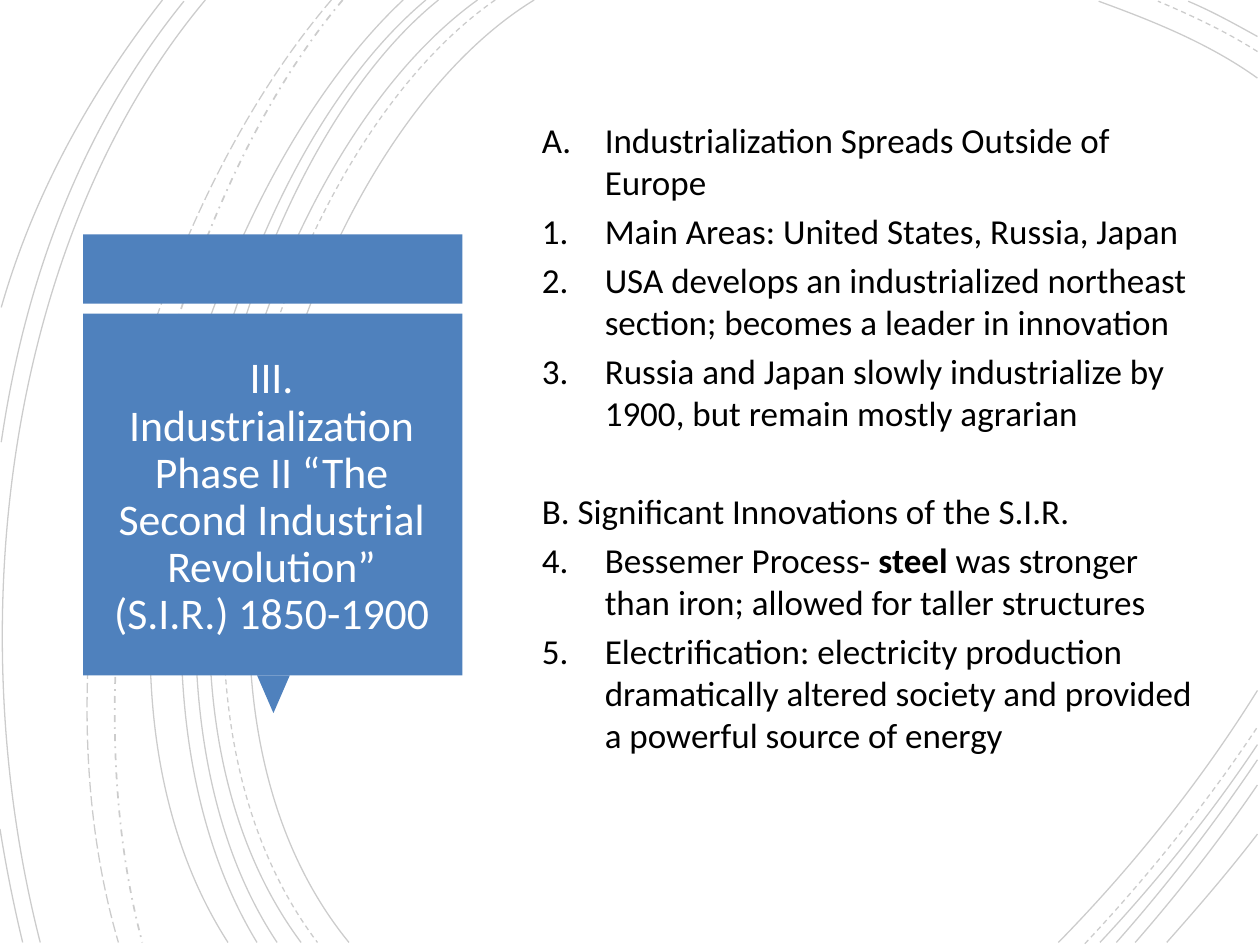
from lxml import etree
from pptx import Presentation
from pptx import util as u
from pptx.dml.color import RGBColor
from pptx.enum import dml, shapes, text
from pptx.oxml import ns

BLUE, WHITE, BLACK = "4F81BD", "FFFFFF", "000000"
FONT = "Calibri"
SOLID, DASH = dml.MSO_LINE.SOLID, dml.MSO_LINE.DASH
LONG_DASH, DASH_DOT = dml.MSO_LINE.LONG_DASH, dml.MSO_LINE.DASH_DOT

# Background arcs: start, two control points and end of a cubic curve
ARCS = [
    (SOLID, (4.24, 0), (2.36, 1.15), (1.07, 5.4), (2.77, 7.48)),
    (SOLID, (9.98, 0.62), (9.59, 0.34), (9.13, 0.16), (8.72, 0.01)),
    (SOLID, (8.4, 7.48), (8.97, 6.9), (9.52, 6.22), (9.98, 5.48)),
    (DASH, (3.93, 0), (2.13, 1.25), (0.92, 5.37), (2.52, 7.48)),
    (DASH, (9.98, 0.41), (9.73, 0.25), (9.45, 0.12), (9.19, 0.01)),
    (DASH, (8.61, 7.49), (9.09, 6.98), (9.56, 6.4), (9.98, 5.77)),
    (SOLID, (3.79, 0), (2.02, 1.27), (0.82, 5.37), (2.39, 7.48)),
    (SOLID, (9.98, 0.29), (9.8, 0.19), (9.62, 0.09), (9.43, 0.01)),
    (SOLID, (8.73, 7.48), (9.17, 7.01), (9.6, 6.48), (9.98, 5.91)),
    (SOLID, (3.48, 0), (1.83, 1.33), (0.82, 5.41), (2.2, 7.48)),
    (SOLID, (8.86, 7.48), (9.25, 7.04), (9.63, 6.55), (9.98, 6.03)),
    (SOLID, (3.38, 0), (1.73, 1.38), (0.73, 5.33), (2.04, 7.48)),
    (SOLID, (9.01, 7.48), (9.35, 7.09), (9.68, 6.67), (9.98, 6.23)),
    (SOLID, (3.2, 0), (1.63, 1.47), (0.4, 5.29), (1.81, 7.48)),
    (SOLID, (9.26, 7.48), (9.5, 7.21), (9.75, 6.92), (9.98, 6.62)),
    (DASH_DOT, (2.72, 0), (1.32, 1.66), (0.49, 5.09), (1.13, 7.48)),
    (LONG_DASH, (2.63, 0), (1.18, 1.69), (0.21, 4.99), (0.94, 7.48)),
    (SOLID, (1.63, 0), (0.08, 1.85), (-0.34, 4.9), (0.32, 7.48)),
    (SOLID, (1.46, 0.01), (0.69, 0.96), (0.21, 2.14), (0.01, 3.51)),
    (SOLID, (0, 6.58), (0.05, 6.89), (0.11, 7.19), (0.18, 7.48)),
    (SOLID, (1.29, 0), (0.75, 0.69), (0.28, 1.5), (0.01, 2.44)),
]

TITLE = ("III. Industrialization Phase II “The Second Industrial "
         "Revolution” (S.I.R.) 1850-1900")

# Outline: numbering scheme, first number, runs as (text, bold)
LETTER, NUMBER = "alphaUcPeriod", "arabicPeriod"
OUTLINE = [
    (LETTER, 1, [("Industrialization Spreads Outside of Europe", False)]),
    (NUMBER, 1, [("Main Areas: United States, Russia, Japan", False)]),
    (NUMBER, 1, [("USA develops an industrialized northeast section; "
                  "becomes a leader in innovation", False)]),
    (NUMBER, 1, [("Russia and Japan slowly industrialize by 1900, "
                  "but remain mostly agrarian", False)]),
    (None, None, [("B. Significant Innovations of the S.I.R.", False)]),
    (NUMBER, 4, [("Bessemer Process- ", False), ("steel", True),
                 (" was stronger than iron; allowed for taller structures", False)]),
    (NUMBER, 4, [("Electrification: electricity production dramatically altered "
                  "society and provided a powerful source of energy", False)]),
]


def rgb(value):
    return RGBColor.from_string(value)


def add_text(paragraph, content, size=20, color=BLACK, bold=False):
    run = paragraph.add_run()
    run.text = content
    run.font.name = FONT
    run.font.size = u.Pt(size)
    run.font.bold = bold
    run.font.color.rgb = rgb(color)


def curve_outline(arc):
    """Join the three segments of an outline into one cubic curve."""
    outline = arc.element.spPr.find(".//" + ns.qn("a:path"))
    curve = etree.SubElement(outline, ns.qn("a:cubicBezTo"))
    for segment in outline.findall(ns.qn("a:lnTo")):
        curve.append(segment[0])
        outline.remove(segment)


def add_arc(group, dash, points):
    start, *rest = [tuple(map(u.Inches, point)) for point in points]
    builder = group.shapes.build_freeform(*start)
    builder.add_line_segments(rest, close=False)
    arc = builder.convert_to_shape()
    curve_outline(arc)
    arc.shadow.inherit = False
    arc.fill.background()
    arc.line.width = u.Pt(1 if dash == DASH_DOT else 0.75)
    arc.line.color.rgb = rgb(BLACK)
    arc.line.dash_style = dash
    # 20 % opacity
    line_color = arc.element.spPr.find(ns.qn("a:ln")).find(".//" + ns.qn("a:srgbClr"))
    etree.SubElement(line_color, ns.qn("a:alpha"), val="20000")


def add_block(group, kind, left, top, width, height, rotation=0):
    block = group.shapes.add_shape(kind, *map(u.Inches, (left, top, width, height)))
    block.rotation = rotation
    block.shadow.inherit = False
    block.fill.solid()
    block.fill.fore_color.rgb = rgb(BLUE)
    block.line.fill.background()


def place(slide, holder, left, top, width, height):
    """Move a placeholder to its spot, in front of the artwork."""
    holder.left, holder.top, holder.width, holder.height = map(
        u.Inches, (left, top, width, height))
    slide.shapes.element.append(holder.element)
    frame = holder.text_frame
    frame.word_wrap = True
    frame.auto_size = text.MSO_AUTO_SIZE.NONE
    frame.vertical_anchor = text.MSO_ANCHOR.MIDDLE
    return frame


def set_numbering(paragraph, scheme, start):
    props = paragraph._p.get_or_add_pPr()
    indent = u.Inches(0.5) if scheme else 0
    props.set("marL", str(indent))
    props.set("indent", str(-indent))
    if scheme:
        etree.SubElement(props, ns.qn("a:buFont"), typeface="+mj-lt")
        etree.SubElement(props, ns.qn("a:buAutoNum"), type=scheme, startAt=str(start))
    else:
        etree.SubElement(props, ns.qn("a:buNone"))


def fill_title(frame):
    heading = frame.paragraphs[0]
    heading.alignment = text.PP_ALIGN.CENTER
    heading.line_spacing = 0.9
    add_text(heading, TITLE, size=25, color=WHITE)


def fill_outline(frame):
    # Deeper bottom margin lifts the centred list
    frame.margin_bottom = u.Inches(0.67)
    for index, (scheme, start, runs) in enumerate(OUTLINE):
        item = frame.add_paragraph() if index else frame.paragraphs[0]
        # The second section is set off by a gap
        item.space_before = u.Pt(4 if scheme else 32)
        set_numbering(item, scheme, start)
        for content, bold in runs:
            add_text(item, content, bold=bold)


def main():
    deck = Presentation()
    deck.slide_width, deck.slide_height = u.Inches(10), u.Inches(7.5)
    slide = deck.slides.add_slide(deck.slide_layouts[1])

    # Background arcs
    backdrop = slide.shapes.add_group_shape()
    for dash, *points in ARCS:
        add_arc(backdrop, dash, points)

    # Title panel: top band, pointer, main block
    panel = slide.shapes.add_group_shape()
    add_block(panel, shapes.MSO_SHAPE.RECTANGLE, 0.66, 1.86, 3.01, 0.55)
    add_block(panel, shapes.MSO_SHAPE.ISOSCELES_TRIANGLE, 2.04, 5.36, 0.26, 0.3, 180)
    add_block(panel, shapes.MSO_SHAPE.RECTANGLE, 0.66, 2.49, 3.01, 2.87)

    # Title and outline
    outline = slide.placeholders[1]
    fill_title(place(slide, slide.shapes.title, 0.74, 2.64, 2.83, 2.62))
    fill_outline(place(slide, outline, 4.2, 0.16, 5.48, 7.24))

    deck.save("out.pptx")


if __name__ == "__main__":
    main()
